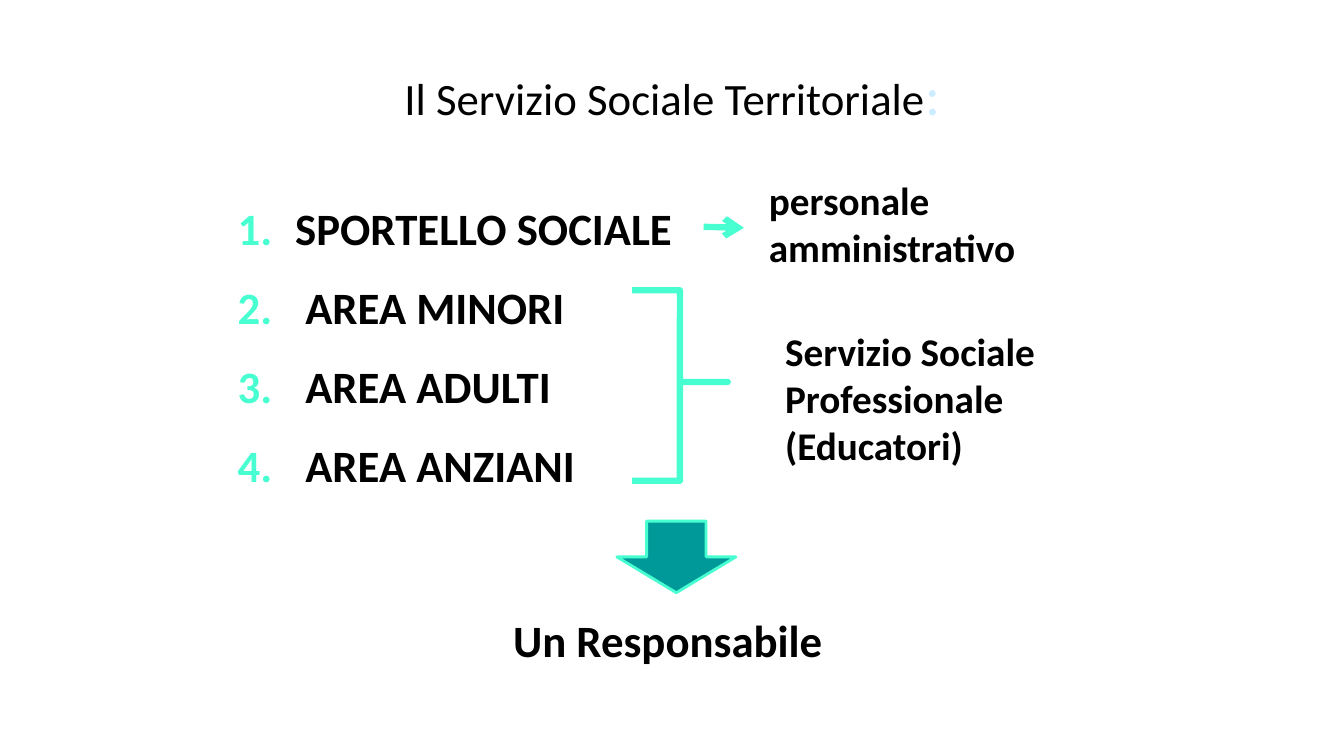
"""Builds the slide on the organisation of the territorial social service."""

import dataclasses

import lxml.etree
import pptx
import pptx.dml.color
import pptx.enum.shapes
import pptx.enum.text
import pptx.oxml.ns
import pptx.util

Pt = pptx.util.Pt
ALIGN = pptx.enum.text.PP_ALIGN
ANCHOR = pptx.enum.text.MSO_ANCHOR
SHAPE = pptx.enum.shapes.MSO_SHAPE

FONT = "Calibri"
BLACK = "000000"
AQUA = "47FFD1"
TEAL = "009999"
PALE_BLUE = "CCECFF"


@dataclasses.dataclass
class Label:
    left: float
    top: float
    width: float
    height: float
    lines: list[str]
    size: float = 32
    bold: bool = True
    align: ALIGN = ALIGN.LEFT
    anchor: ANCHOR = ANCHOR.TOP
    numbered: bool = False


@dataclasses.dataclass
class Symbol:
    kind: SHAPE
    left: float
    top: float
    width: float
    height: float
    adjustments: tuple[float, float]
    line_width: float
    fill: str | None = None


TITLE = Label(156.24, 21.6, 648, 90, ["Il Servizio Sociale Territoriale"],
              bold=False, align=ALIGN.CENTER, anchor=ANCHOR.MIDDLE)
LABELS = [
    Label(162.72, 139.68, 589.68, 216.72,
          ["SPORTELLO SOCIALE", " AREA MINORI", " AREA ADULTI", " AREA ANZIANI"],
          numbered=True),
    Label(553.68, 230.4, 244.08, 109.44,
          ["Servizio Sociale Professionale", "(Educatori)"], size=28),
    Label(542.16, 122.4, 286.56, 74.88, ["personale amministrativo"], size=28),
    Label(185.04, 434.16, 583.92, 46.08, ["Un Responsabile"], align=ALIGN.CENTER),
]
SYMBOLS = [
    Symbol(SHAPE.RIGHT_BRACE, 451.44, 207.36, 68.4, 136.08, (0, 0.481), 4.5),
    Symbol(SHAPE.DOWN_ARROW, 440.64, 372.24, 84.96, 51.12, (0.5, 0.5), 2, TEAL),
]


def color(value: str) -> pptx.dml.color.RGBColor:
    return pptx.dml.color.RGBColor.from_string(value)


def add_child(parent, tag: str, **attributes: str):
    child = lxml.etree.SubElement(parent, pptx.oxml.ns.qn(tag))
    for name, value in attributes.items():
        child.set(name, value)
    return child


def format_run(run, size: float, bold: bool, value: str) -> None:
    run.font.name = FONT
    run.font.size = Pt(size)
    run.font.bold = bold
    run.font.color.rgb = color(value)


def number_paragraph(paragraph) -> None:
    paragraph.space_after = Pt(18)
    properties = paragraph._p.get_or_add_pPr()
    indent = Pt(41.04)
    properties.set("marL", str(indent))
    properties.set("indent", str(-indent))
    bullet_color = add_child(properties, "a:buClr")
    add_child(bullet_color, "a:srgbClr", val=AQUA)
    add_child(properties, "a:buFont", typeface=FONT)
    add_child(properties, "a:buAutoNum", type="arabicPeriod")


def add_label(slide, label: Label):
    shape = slide.shapes.add_textbox(
        Pt(label.left), Pt(label.top), Pt(label.width), Pt(label.height))
    text_frame = shape.text_frame
    text_frame.word_wrap = True
    text_frame.vertical_anchor = label.anchor
    text_frame.text = "\n".join(label.lines)
    for paragraph in text_frame.paragraphs:
        paragraph.alignment = label.align
        format_run(paragraph.runs[0], label.size, label.bold, BLACK)
        if label.numbered:
            number_paragraph(paragraph)
    return shape


def add_symbol(slide, symbol: Symbol) -> None:
    shape = slide.shapes.add_shape(
        symbol.kind, Pt(symbol.left), Pt(symbol.top), Pt(symbol.width), Pt(symbol.height))
    shape.shadow.inherit = False
    for index, adjustment in enumerate(symbol.adjustments):
        shape.adjustments[index] = adjustment
    if symbol.fill:
        shape.fill.solid()
        shape.fill.fore_color.rgb = color(symbol.fill)
    else:
        shape.fill.background()
    shape.line.color.rgb = color(AQUA)
    shape.line.width = Pt(symbol.line_width)


def add_arrow(slide, start: tuple[float, float], end: tuple[float, float]) -> None:
    connector = slide.shapes.add_connector(
        pptx.enum.shapes.MSO_CONNECTOR.STRAIGHT,
        Pt(start[0]), Pt(start[1]), Pt(end[0]), Pt(end[1]))
    connector.line.color.rgb = color(AQUA)
    connector.line.width = Pt(4.5)
    add_child(connector.line._get_or_add_ln(), "a:tailEnd", type="arrow")
    add_child(connector._element.spPr, "a:effectLst")


def main() -> None:
    presentation = pptx.Presentation()
    presentation.slide_width = Pt(960)
    presentation.slide_height = Pt(540)
    slide = presentation.slides.add_slide(presentation.slide_layouts[6])

    title = add_label(slide, TITLE)
    colon = title.text_frame.paragraphs[0].add_run()
    colon.text = ":"
    format_run(colon, 40, False, PALE_BLUE)

    for label in LABELS:
        add_label(slide, label)
    for symbol in SYMBOLS:
        add_symbol(slide, symbol)
    add_arrow(slide, (502.56, 162), (531.36, 162.72))

    presentation.save("out.pptx")


if __name__ == "__main__":
    main()
